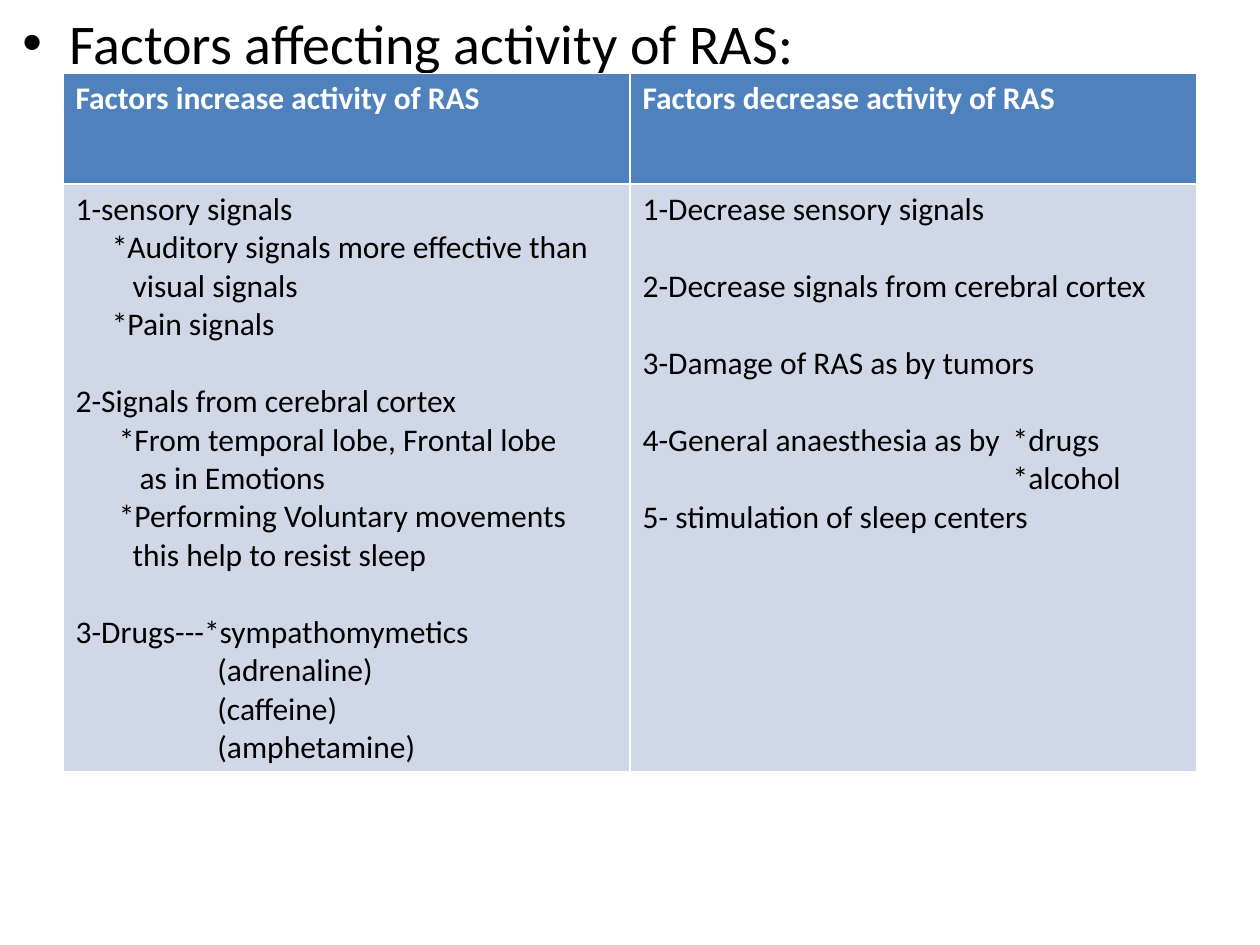
"""Build a slide that lists the factors raising and lowering RAS activity."""
import lxml.etree
import pptx
import pptx.dml.color
import pptx.oxml.ns
import pptx.util

Cm, Pt = pptx.util.Cm, pptx.util.Pt
FONT = "Calibri"
COLORS = {"text": "000000", "header_text": "FFFFFF", "header": "4F81BD", "body": "D0D8E8"}
TITLE = "Factors affecting activity of RAS:"
TITLE_INDENT = 0.95
GAP = 22
SECOND_STOP = 7.46

# Each line holds its text, left indent in centimetres and space before in points.
FACTORS = {
    "Factors increase activity of RAS": [
        ("1-sensory signals", 0, 0),
        ("*Auditory signals more effective than", 0.73, 0),
        ("visual signals", 1.15, 0),
        ("*Pain signals", 0.73, 0),
        ("2-Signals from cerebral cortex", 0, GAP),
        ("*From temporal lobe, Frontal lobe", 0.87, 0),
        ("as in Emotions", 1.29, 0),
        ("*Performing Voluntary movements", 0.87, 0),
        ("this help to resist sleep", 1.15, 0),
        ("3-Drugs---*sympathomymetics", 0, GAP),
        ("(adrenaline)", 2.86, 0),
        ("(caffeine)", 2.86, 0),
        ("(amphetamine)", 2.86, 0),
    ],
    "Factors decrease activity of RAS": [
        ("1-Decrease sensory signals", 0, 0),
        ("2-Decrease signals from cerebral cortex", 0, GAP),
        ("3-Damage of RAS as by tumors", 0, GAP),
        ("4-General anaesthesia as by\t*drugs", 0, GAP),
        ("*alcohol", SECOND_STOP, 0),
        ("5- stimulation of sleep centers", 0, 0),
    ],
}


def color(name):
    return pptx.dml.color.RGBColor.from_string(COLORS[name])


def add_element(parent, tag, **attributes):
    element = lxml.etree.SubElement(parent, pptx.oxml.ns.qn(tag))
    for name, value in attributes.items():
        element.set(name, str(value))
    return element


def add_span(para, text, size, color_name, bold=False):
    span = para.add_run()
    span.text = text
    span.font.name = FONT
    span.font.size = Pt(size)
    span.font.bold = bold
    span.font.color.rgb = color(color_name)


def add_title(page):
    box = page.shapes.add_textbox(Cm(0.2), Cm(0.05), Cm(24.97), Cm(1.6))
    box.text_frame.word_wrap = True
    para = box.text_frame.paragraphs[0]
    add_span(para, TITLE, 32, "text")
    properties = para._p.get_or_add_pPr()
    properties.set("marL", str(Cm(TITLE_INDENT)))
    properties.set("indent", str(-Cm(TITLE_INDENT)))
    add_element(properties, "a:buFont", typeface="Arial")
    add_element(properties, "a:buChar", char="•")


def fill_cell(cell, fill_name, lines, text_name, bold=False):
    cell.fill.solid()
    cell.fill.fore_color.rgb = color(fill_name)
    frame = cell.text_frame
    for index, (text, indent, gap) in enumerate(lines):
        para = frame.add_paragraph() if index else frame.paragraphs[0]
        para.space_before = Pt(gap)
        add_span(para, text, 18, text_name, bold)
        properties = para._p.get_or_add_pPr()
        properties.set("marL", str(Cm(indent)))
        if "\t" in text:
            stops = add_element(properties, "a:tabLst")
            add_element(stops, "a:tab", pos=Cm(SECOND_STOP), algn="l")


def add_factor_table(page):
    header_height, body_height = Cm(2.23), Cm(11.85)
    table = page.shapes.add_table(
        2, len(FACTORS), Cm(1.27), Cm(1.48), Cm(22.86), header_height + body_height
    ).table
    table.rows[0].height, table.rows[1].height = header_height, body_height
    for column, (heading, lines) in enumerate(FACTORS.items()):
        fill_cell(table.cell(0, column), "header", [(heading, 0, 0)], "header_text", True)
        fill_cell(table.cell(1, column), "body", lines, "text")


def main():
    deck = pptx.Presentation()
    deck.slide_width, deck.slide_height = Cm(25.4), Cm(19.05)
    page = deck.slides.add_slide(deck.slide_layouts[6])
    add_title(page)
    add_factor_table(page)
    deck.save("out.pptx")


if __name__ == "__main__":
    main()
